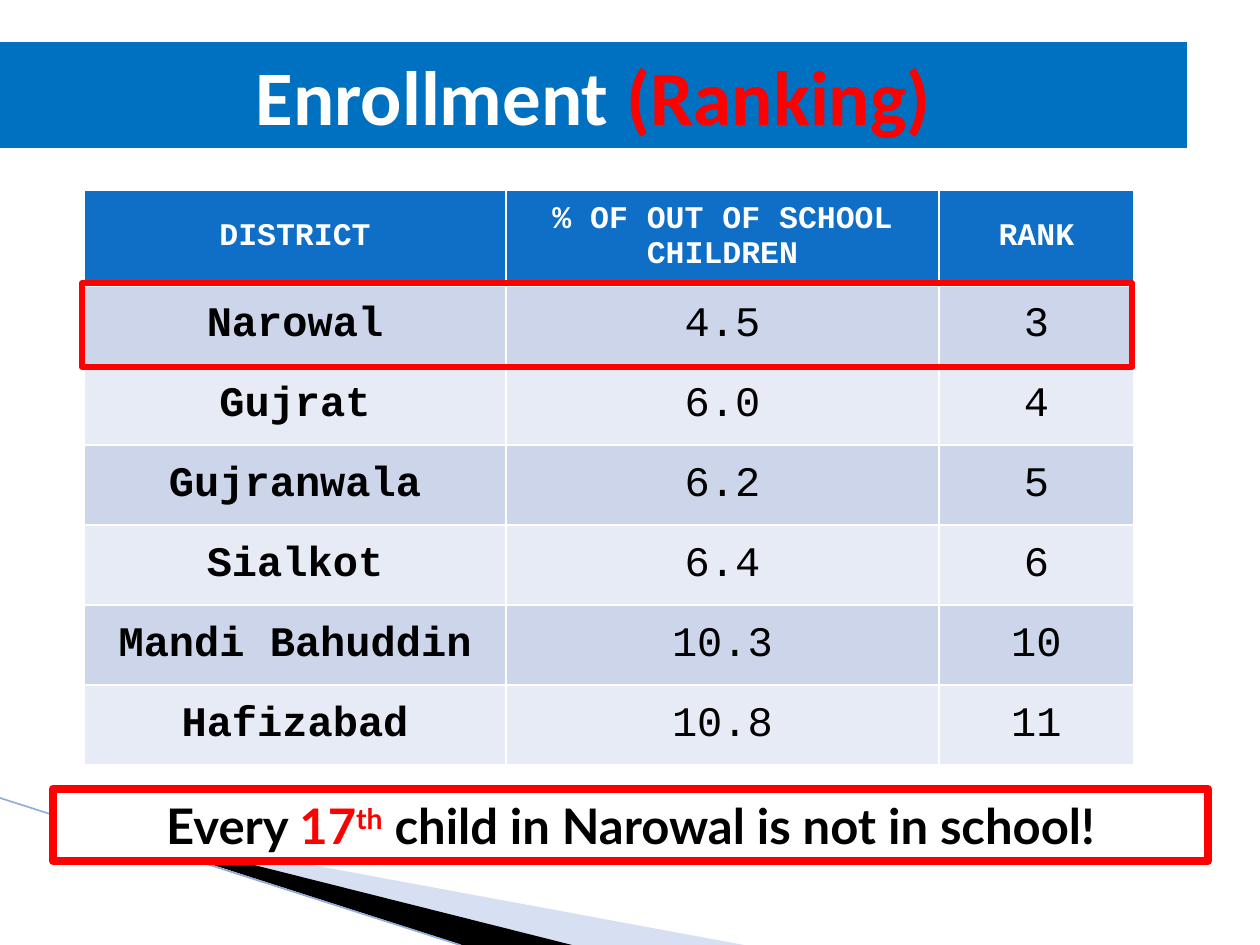
from lxml.etree import SubElement
from pptx import Presentation
from pptx.dml.color import RGBColor
from pptx.enum.shapes import MSO_CONNECTOR as Connector, MSO_SHAPE as Shape
from pptx.enum.text import MSO_ANCHOR as Anchor, MSO_AUTO_SIZE as AutoSize, PP_ALIGN as Align
from pptx.oxml.ns import qn
from pptx.util import Pt

PX = 914400 / 126
COLORS = {
    "white": "FFFFFF", "black": "000000", "red": "FF0000", "banner": "0070C0",
    "header": "0F6FC6", "odd": "CCD5EA", "even": "E7EBF5",
    "ray": "9DB2E1", "edge": "94ABDC",
}
HEADINGS = ("DISTRICT", "% OF OUT OF SCHOOL CHILDREN", "RANK")
DISTRICTS = [
    ("Narowal", "4.5", "3"),
    ("Gujrat", "6.0", "4"),
    ("Gujranwala", "6.2", "5"),
    ("Sialkot", "6.4", "6"),
    ("Mandi Bahuddin", "10.3", "10"),
    ("Hafizabad", "10.8", "11"),
]
COLUMN_WIDTHS = (422, 433, 195)
HEADER_HEIGHT, ROW_HEIGHT = 95, 80


def px(length):
    """Turn pixels into EMU."""
    return int(length * PX)


def rgb(name):
    """Look up a named colour."""
    return RGBColor.from_string(COLORS[name])


def style_font(font, face, size, color, bold=True):
    """Set the face, size, colour and weight of a font."""
    font.name, font.size, font.bold = face, Pt(size), bold
    font.color.rgb = rgb(color)


def add_ray(slide, points, color, alpha=None):
    """Draw one filled corner ray, optionally translucent."""
    builder = slide.shapes.build_freeform(*points[0], scale=PX)
    builder.add_line_segments(points[1:], close=True)
    ray = builder.convert_to_shape()
    ray.shadow.inherit = False
    ray.line.fill.background()
    ray.fill.solid()
    ray.fill.fore_color.rgb = rgb(color)
    if alpha is not None:
        tint = ray.fill._xPr.find(qn("a:solidFill"))[0]
        SubElement(tint, qn("a:alpha"), val=str(alpha * 1000))


def add_edge(slide, start, end, color):
    """Draw the thin straight edge beside the rays."""
    edge = slide.shapes.add_connector(
        Connector.STRAIGHT, *(px(value) for value in start + end))
    edge.line.color.rgb = rgb(color)
    edge.line.width = Pt(0.95)
    SubElement(edge._element.spPr, qn("a:effectLst"))


def add_box(slide, box, fill=None, outline=None, weight=0):
    """Draw a rectangle with an optional fill and outline."""
    panel = slide.shapes.add_shape(Shape.RECTANGLE, *(px(value) for value in box))
    panel.shadow.inherit = False
    if fill:
        panel.fill.solid()
        panel.fill.fore_color.rgb = rgb(fill)
    else:
        panel.fill.background()
    if outline:
        panel.line.color.rgb = rgb(outline)
        panel.line.width = Pt(weight)
    else:
        panel.line.fill.background()
    return panel


def write_line(panel, pieces, face, size):
    """Write one centred line from text, colour and baseline pieces."""
    frame = panel.text_frame
    frame.word_wrap = True
    frame.auto_size = AutoSize.SHAPE_TO_FIT_TEXT
    frame.vertical_anchor = Anchor.MIDDLE
    line = frame.paragraphs[0]
    line.alignment = Align.CENTER
    for text, color, baseline in pieces:
        run = line.add_run()
        run.text = text
        style_font(run.font, face, size, color)
        if baseline:
            run._r.get_or_add_rPr().set("baseline", str(baseline * 1000))


def set_borders(cell, top, bottom):
    """Give a cell white borders, 1 pt wide at its sides."""
    properties = cell._tc.get_or_add_tcPr()
    for side, weight in (("L", 1), ("R", 1), ("T", top), ("B", bottom)):
        border = SubElement(properties, qn(f"a:ln{side}"), w=str(Pt(weight)))
        fill = SubElement(border, qn("a:solidFill"))
        SubElement(fill, qn("a:srgbClr"), val=COLORS["white"])


def fill_cell(cell, text, fill, size, color, bold):
    """Write and colour one table cell."""
    cell.fill.solid()
    cell.fill.fore_color.rgb = rgb(fill)
    cell.vertical_anchor = Anchor.MIDDLE
    cell.text_frame.text = text
    entry = cell.text_frame.paragraphs[0]
    entry.alignment = Align.CENTER
    style_font(entry.runs[0].font, "Courier New", size, color, bold)


def add_ranking(slide, left, top):
    """Build the district ranking table."""
    height = HEADER_HEIGHT + ROW_HEIGHT * len(DISTRICTS)
    ranking = slide.shapes.add_table(
        len(DISTRICTS) + 1, len(HEADINGS),
        px(left), px(top), px(sum(COLUMN_WIDTHS)), px(height)).table
    for column, width in zip(ranking.columns, COLUMN_WIDTHS):
        column.width = px(width)
    for r, values in enumerate([HEADINGS] + DISTRICTS):
        ranking.rows[r].height = px(ROW_HEIGHT if r else HEADER_HEIGHT)
        for c, text in enumerate(values):
            cell = ranking.cell(r, c)
            set_borders(cell, 3 if r == 1 else 1, 1 if r else 3)
            if r:
                cell.margin_left = cell.margin_right = cell.margin_top = px(1)
                cell.margin_bottom = 0
                fill_cell(cell, text, "odd" if r % 2 else "even", 24, "black", c == 0)
            else:
                fill_cell(cell, text, "header", 18, "white", True)


def main():
    """Build the enrollment ranking slide."""
    deck = Presentation()
    deck.slide_width, deck.slide_height = px(1260), px(945)
    slide = deck.slides.add_slide(deck.slide_layouts[6])

    add_ray(slide, [(69, 820), (744, 945), (570, 945)], "ray", 40)
    add_ray(slide, [(67, 818), (572, 945), (462, 945)], "black")
    add_edge(slide, (0, 798), (460, 945), "edge")

    message = add_box(slide, (53, 789, 1155, 72), "white", "red", 4.5)
    write_line(message, [
        ("Every ", "black", 0),
        ("17", "red", 0),
        ("th", "red", 30),
        (" child in Narowal is not in school!", "black", 0),
    ], "Lato", 28)

    add_ranking(slide, 84, 190)
    add_box(slide, (82, 283, 1050, 84), outline="red", weight=3.5)

    banner = add_box(slide, (0, 42, 1187, 106), "banner")
    write_line(banner, [("Enrollment ", "white", 0), ("(Ranking)", "red", 0)], "Calibri", 44)

    deck.save("out.pptx")


if __name__ == "__main__":
    main()
